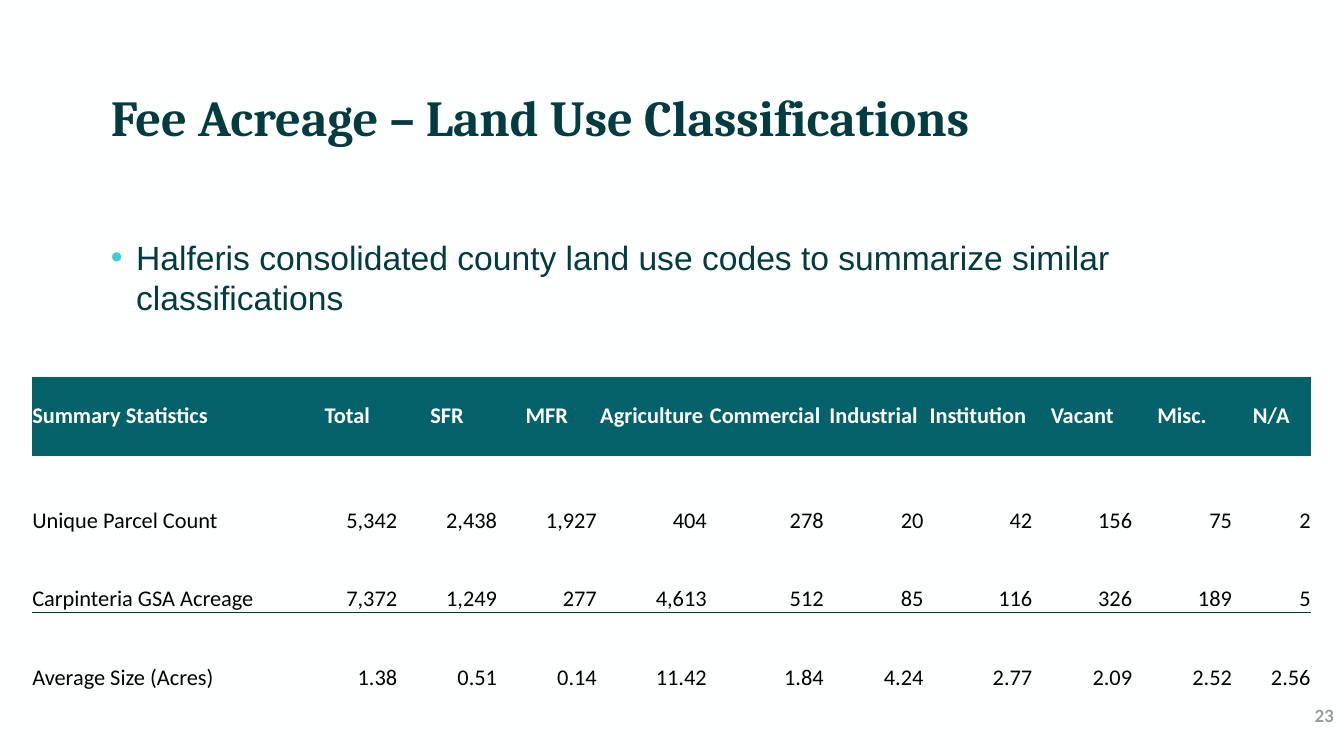
from lxml import etree
from pptx import Presentation
from pptx.dml.color import RGBColor
from pptx.enum.text import MSO_ANCHOR, PP_ALIGN
from pptx.oxml.ns import qn
from pptx.util import Inches, Pt

LEFT, CENTER, RIGHT = PP_ALIGN.LEFT, PP_ALIGN.CENTER, PP_ALIGN.RIGHT
TOP, MIDDLE, BOTTOM = MSO_ANCHOR.TOP, MSO_ANCHOR.MIDDLE, MSO_ANCHOR.BOTTOM

COLORS = {
    "background": "FEFFFF",
    "ink": "023B40",
    "bullet": "3DCCD5",
    "header": "036269",
    "white": "FFFFFF",
    "black": "000000",
    "page": "969999",
}
NO_GRID_STYLE = "{2D5ABB26-0587-4C30-8999-92F81FD0307C}"

COLUMN_WIDTHS = [2.63, 0.99, 0.99, 0.99, 1.09, 1.16, 0.99, 1.08, 0.99, 0.99, 0.78]
ROW_HEIGHT = 0.78
ROWS = [
    ["Summary Statistics", "Total", "SFR", "MFR", "Agriculture", "Commercial",
     "Industrial", "Institution", "Vacant", "Misc.", "N/A"],
    ["Unique Parcel Count", "5,342", "2,438", "1,927", "404", "278",
     "20", "42", "156", "75", "2"],
    ["Carpinteria GSA Acreage", "7,372", "1,249", "277", "4,613", "512",
     "85", "116", "326", "189", "5"],
    ["Average Size (Acres)", "1.38", "0.51", "0.14", "11.42", "1.84",
     "4.24", "2.77", "2.09", "2.52", "2.56"],
]
AVERAGE_ROW = 3


def rgb(name):
    return RGBColor.from_string(COLORS[name])


def add_run(p, text, font, size, color, bold=False):
    r = p.add_run()
    r.text = text
    r.font.name = font
    r.font.size = Pt(size)
    r.font.bold = bold
    r.font.color.rgb = rgb(color)


def add_text_box(s, box, insets=(0, 0, 0, 0), anchor=TOP):
    """Add a wrapping text box and return its first paragraph."""
    tf = s.shapes.add_textbox(*map(Inches, box)).text_frame
    tf.word_wrap = True
    tf.vertical_anchor = anchor
    tf.margin_left, tf.margin_top, tf.margin_right, tf.margin_bottom = map(Inches, insets)
    return tf.paragraphs[0]


def set_bullet(p, char, color, indent):
    pPr = p._p.get_or_add_pPr()
    pPr.set("marL", str(Inches(indent)))
    pPr.set("indent", str(-Inches(indent)))
    buClr = etree.SubElement(pPr, qn("a:buClr"))
    etree.SubElement(buClr, qn("a:srgbClr"), val=COLORS[color])
    etree.SubElement(pPr, qn("a:buFont"), typeface="Arial")
    etree.SubElement(pPr, qn("a:buChar"), char=char)


def set_border(cell, side, color, width):
    """Draw one cell edge; side is a:lnT or a:lnB."""
    ln = etree.Element(qn(side), w=str(Pt(width)))
    fill = etree.SubElement(ln, qn("a:solidFill"))
    etree.SubElement(fill, qn("a:srgbClr"), val=COLORS[color])
    cell._tc.get_or_add_tcPr().insert(0, ln)


def fill_cell(cell, text, row, col):
    header = row == 0
    cell.margin_left = cell.margin_right = cell.margin_top = cell.margin_bottom = 0
    cell.vertical_anchor = MIDDLE if header else BOTTOM
    if header:
        cell.fill.solid()
        cell.fill.fore_color.rgb = rgb("header")
    else:
        cell.fill.background()
    p = cell.text_frame.paragraphs[0]
    p.alignment = LEFT if col == 0 else CENTER if header else RIGHT
    add_run(p, text, "Calibri", 16, "white" if header else "black", header)
    if row == AVERAGE_ROW - 1:
        set_border(cell, "a:lnB", "ink", 1)
    elif row == AVERAGE_ROW:
        set_border(cell, "a:lnT", "ink", 1)


def add_statistics_table(s, left, top):
    frame = s.shapes.add_table(
        len(ROWS), len(COLUMN_WIDTHS), Inches(left), Inches(top),
        Inches(sum(COLUMN_WIDTHS)), Inches(ROW_HEIGHT * len(ROWS)))
    table = frame.table
    table.horz_banding = False
    table._tbl.tblPr.find(qn("a:tableStyleId")).text = NO_GRID_STYLE
    for column, width in zip(table.columns, COLUMN_WIDTHS):
        column.width = Inches(width)
    for row, texts in enumerate(ROWS):
        table.rows[row].height = Inches(ROW_HEIGHT)
        for col, text in enumerate(texts):
            fill_cell(table.cell(row, col), text, row, col)


def main():
    prs = Presentation()
    prs.slide_width, prs.slide_height = Inches(13.33), Inches(7.5)
    s = prs.slides.add_slide(prs.slide_layouts[6])
    s.background.fill.solid()
    s.background.fill.fore_color.rgb = rgb("background")

    p = add_text_box(s, (1.1, 0.64, 11.13, 1.37), insets=(0, 0.21, 0, 0))
    add_run(p, "Fee Acreage – Land Use Classifications", "Cambria", 36, "ink", True)

    p = add_text_box(s, (1.1, 2.35, 11.13, 4.17))
    p.space_before = Pt(10)
    set_bullet(p, "•", "bullet", 0.25)
    add_run(p, "Halferis consolidated county land use codes to summarize similar "
               "classifications", "Arial", 24, "ink")

    p = add_text_box(s, (11.08, 6.9, 2.25, 0.4), insets=(0.1, 0.05, 0.1, 0.05), anchor=MIDDLE)
    p.alignment = RIGHT
    add_run(p, "23", "Lato", 12, "page", True)

    add_statistics_table(s, 0.32, 3.74)
    prs.save("out.pptx")


if __name__ == "__main__":
    main()
